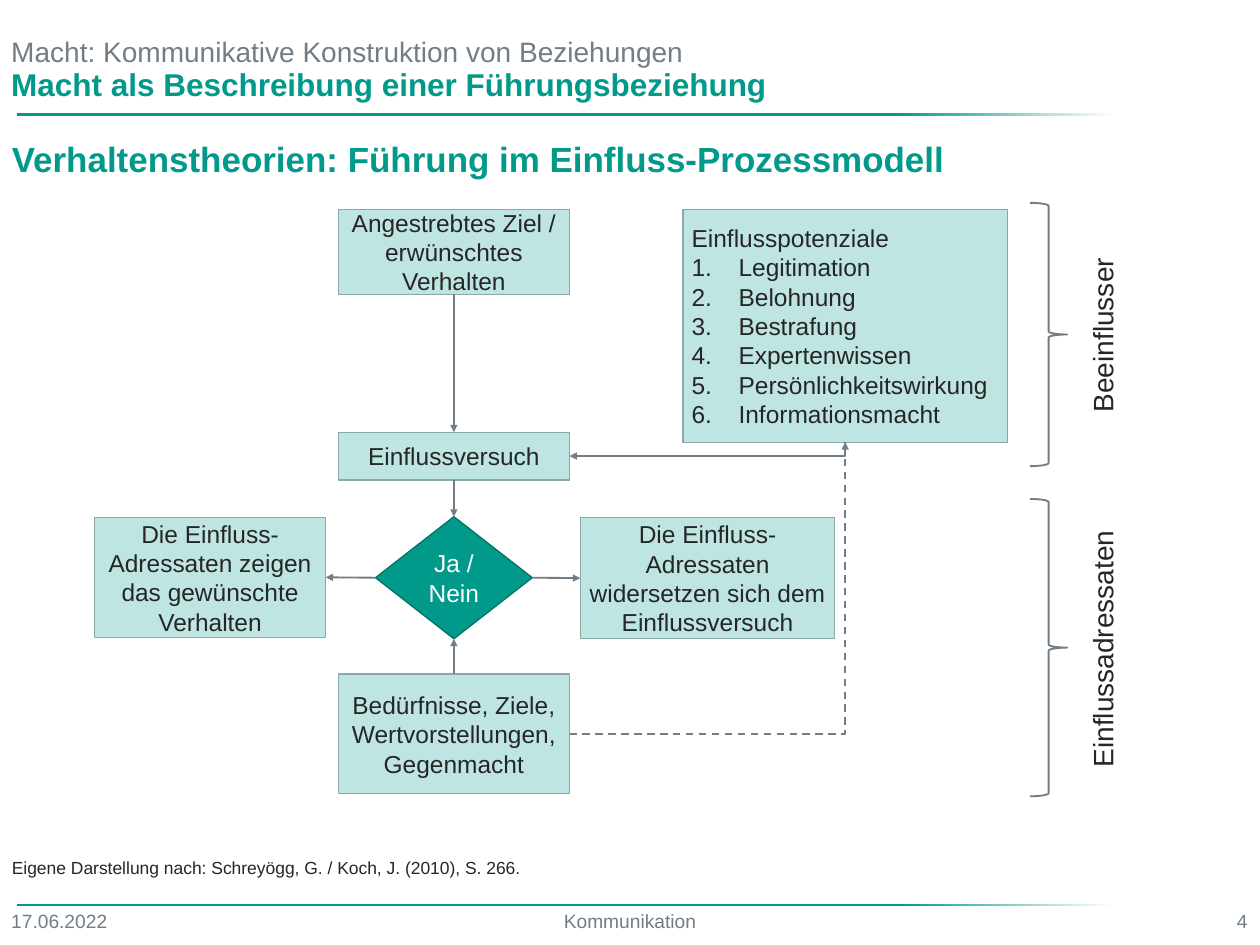
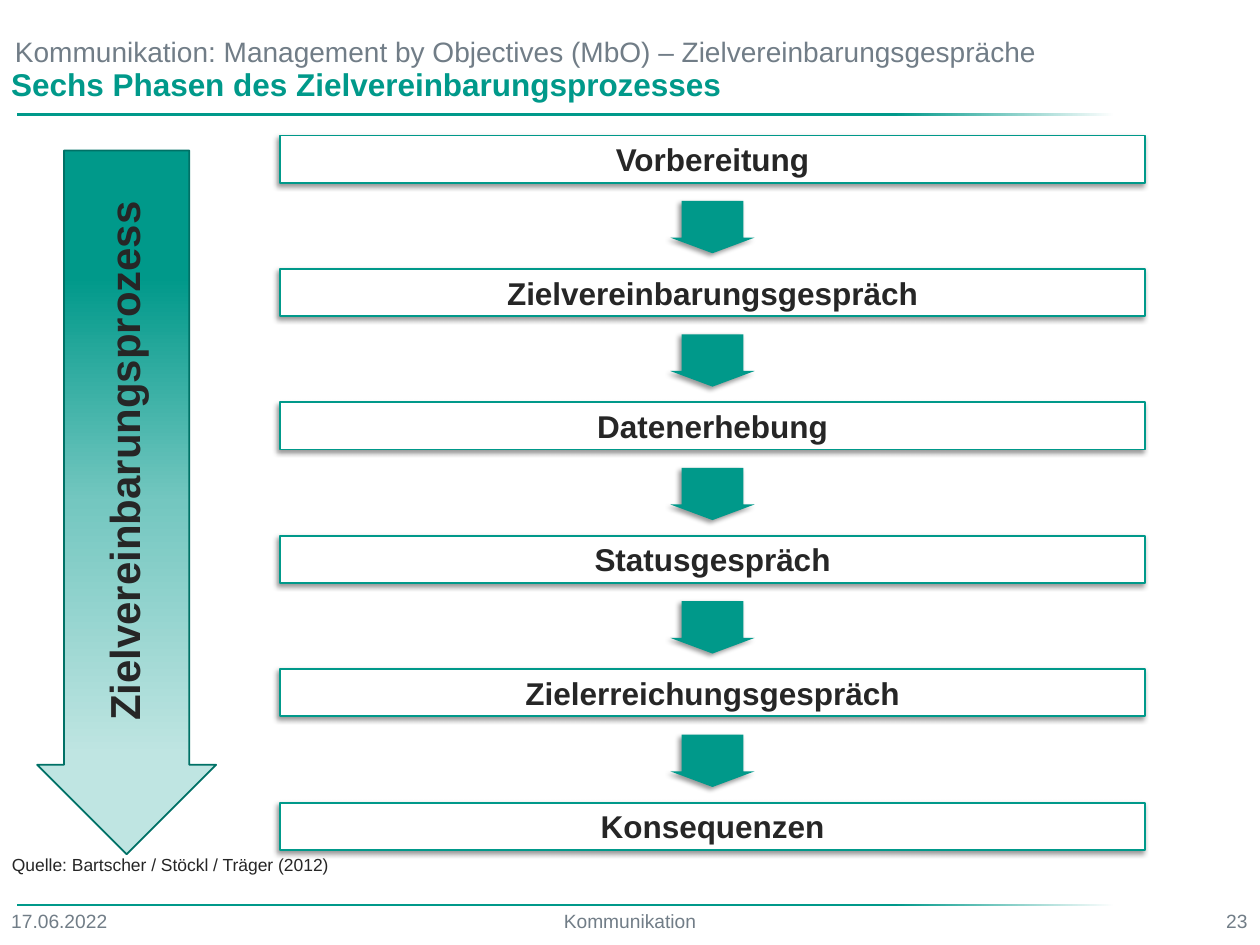
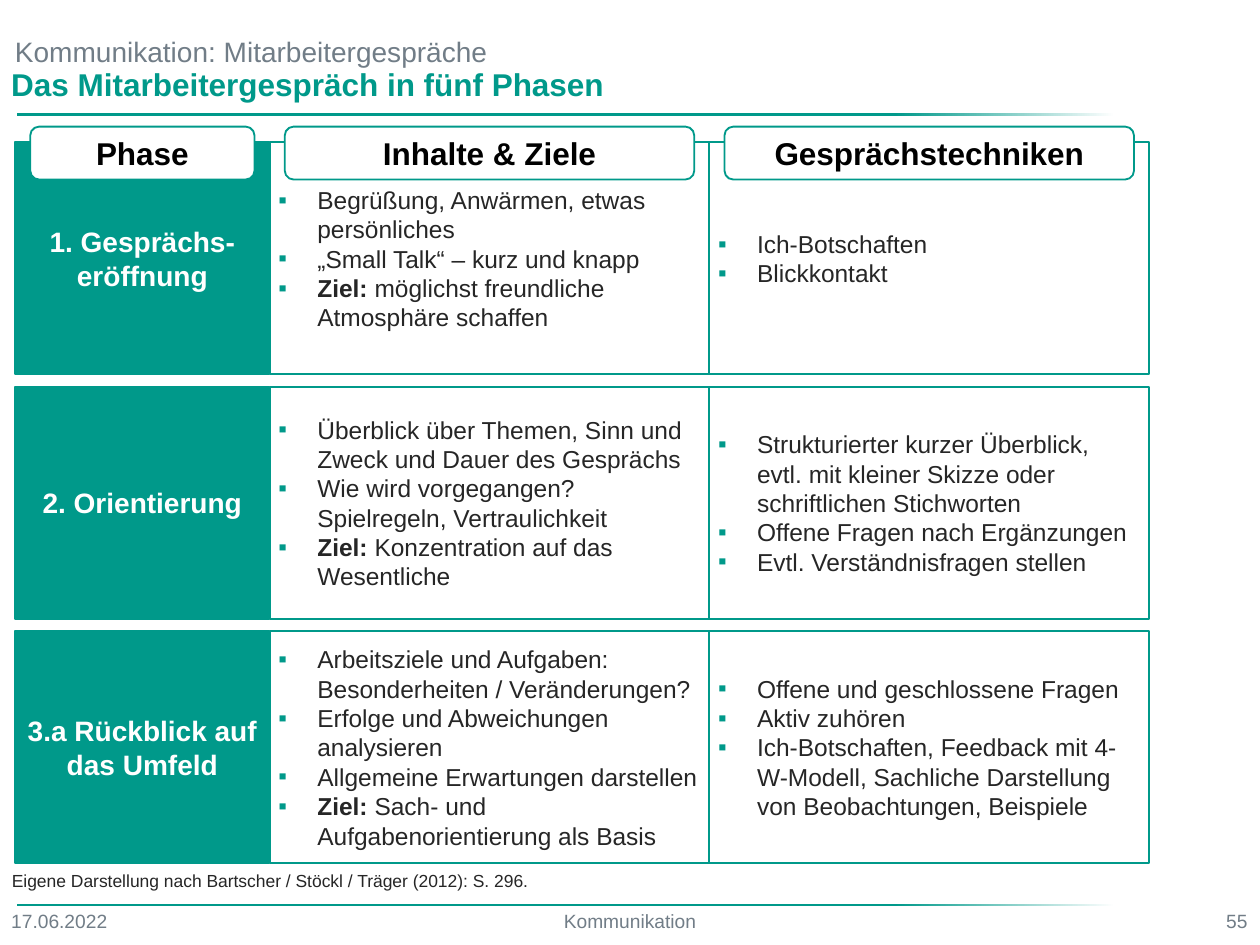
"""Three slides on leadership, target agreements and staff talks."""
from copy import deepcopy

from lxml import etree
from pptx import Presentation, util as u
from pptx.dml.color import RGBColor
from pptx.enum import dml, shapes, text
from pptx.oxml.ns import qn

TEAL = RGBColor(0x00, 0x99, 0x8A)
DEEP = RGBColor(0x00, 0x71, 0x66)
MID = RGBColor(0x74, 0xC7, 0xC0)
PALE = RGBColor(0xBF, 0xE5, 0xE2)
RIM = RGBColor(0x8D, 0xA9, 0xA7)
GREY = RGBColor(0x71, 0x7D, 0x87)
INK = RGBColor(0x26, 0x26, 0x26)
BLACK = RGBColor(0, 0, 0)
WHITE = RGBColor(0xFF, 0xFF, 0xFF)

FORM, SIDE, HOLD = shapes.MSO_SHAPE, text.PP_ALIGN, text.MSO_ANCHOR
LEFT, MIDDLE, RIGHT = SIDE.LEFT, SIDE.CENTER, SIDE.RIGHT

deck = Presentation()
deck.slide_width, deck.slide_height = u.Inches(14.22), u.Inches(10.67)
COL, ROW = deck.slide_width / 100, deck.slide_height / 75

FOOT = dict(size=15.6, ink=GREY)
HEAD = dict(size=22.8, ink=GREY, hold=HOLD.BOTTOM)
NAME = dict(size=25.6, ink=TEAL, bold=True)
NOTE = dict(size=14.2)
BOX = dict(fill=PALE, edge=RIM, side=MIDDLE, hold=HOLD.MIDDLE)
TURN = dict(side=MIDDLE, turn=270)
STEP = dict(fill=WHITE, edge=TEAL, rim=1.5, size=25.6, bold=True,
            side=MIDDLE, hold=HOLD.MIDDLE, shade=True)
CELL = dict(edge=TEAL, rim=1.5, hold=HOLD.MIDDLE)
PHASE = dict(CELL, fill=TEAL, ink=WHITE, size=22.8, bold=True, side=MIDDLE)
LABEL = dict(CELL, fill=WHITE, ink=BLACK, size=25.6, bold=True, side=MIDDLE)
FADE = [(0, TEAL), (0.8, TEAL), (1, WHITE)]
FALL = [(0.18, TEAL), (0.5, MID), (0.86, PALE)]


def tag(home, name, **data):
    """Append a drawing element and return it."""
    node = etree.SubElement(home, qn("a:" + name))
    for key, val in data.items():
        node.set(key, str(val))
    return node


def add(form, at, lines=(), fill=None, edge=None, rim=1, angle=0, adj=(), shade=False,
        turn=0, size=19.9, ink=INK, bold=False, side=LEFT, hold=HOLD.TOP,
        pad=0.1, mark=None):
    """Place a shape or text box on the current slide, measured in grid units."""
    x, y, w, h = at
    area = [int(n) for n in (x * COL, y * ROW, w * COL, h * ROW)]
    if form is None:
        item = page.shapes.add_textbox(*area)
    else:
        item = page.shapes.add_shape(form, *area)
        item.shadow.inherit = False
        for n, val in enumerate(adj):
            item.adjustments[n] = val
        if isinstance(fill, list):
            item.fill.gradient()
            item.fill.gradient_angle = angle
            stops = item._element.spPr.find(qn("a:gradFill")).find(qn("a:gsLst"))
            stops.append(deepcopy(stops[0]))
            for stop, (spot, tone) in zip(item.fill.gradient_stops, fill):
                stop.position, stop.color.rgb = spot, tone
        elif fill is None:
            item.fill.background()
        else:
            item.fill.solid()
            item.fill.fore_color.rgb = fill
        if edge is None:
            item.line.fill.background()
        else:
            item.line.color.rgb, item.line.width = edge, u.Pt(rim)
        if shade:
            glow = tag(item._element.spPr.find(qn("a:effectLst")), "outerShdw",
                       blurRad=u.Pt(4), dist=u.Pt(3), dir=135 * 60000, rotWithShape=0)
            tag(tag(glow, "srgbClr", val=BLACK), "alpha", val=40000)
    item.rotation = turn
    frame = item.text_frame
    looks = dict(word_wrap=True, vertical_anchor=hold, margin_left=u.Inches(pad),
                 margin_right=u.Inches(pad))
    for key, val in looks.items():
        setattr(frame, key, val)
    for n, line in enumerate([lines] if isinstance(lines, str) else lines):
        para = frame.add_paragraph() if n else frame.paragraphs[0]
        para.alignment = side
        if mark == "dot" or mark == "num" and n:
            prop = para._p.get_or_add_pPr()
            gap = u.Inches(0.44 if mark == "dot" else 0.53)
            prop.set("marL", str(gap))
            prop.set("indent", str(-gap))
            if mark == "dot":
                tag(tag(prop, "buClr"), "srgbClr", val=TEAL)
                tag(prop, "buFont", typeface="Arial")
                tag(prop, "buChar", char="▪")
            else:
                tag(prop, "buFont", typeface="Arial")
                tag(prop, "buAutoNum", type="arabicPeriod")
        parts = line.split("|")
        for k, part in enumerate(parts):
            run = para.add_run()
            run.text = part
            font = dict(name="Arial", size=u.Pt(size), bold=bold or k < len(parts) - 1)
            for key, val in font.items():
                setattr(run.font, key, val)
            run.font.color.rgb = ink
    return item


pages = []
for top, name, num, pad, note, low in [
    ("Macht: Kommunikative Konstruktion von Beziehungen",
     "Macht als Beschreibung einer Führungsbeziehung", "4", 0.1,
     "Eigene Darstellung nach: Schreyögg, G. / Koch, J. (2010), S. 266.", 67.7),
    ("Kommunikation: Management by Objectives (MbO) – Zielvereinbarungsgespräche",
     "Sechs Phasen des Zielvereinbarungsprozesses", "23", 0.14,
     "Quelle: Bartscher / Stöckl / Träger (2012)", 67.45),
    ("Kommunikation: Mitarbeitergespräche",
     "Das Mitarbeitergespräch in fünf Phasen", "55", 0.14,
     "Eigene Darstellung nach Bartscher / Stöckl / Träger (2012): S. 296.", 68.7),
]:
    page = deck.slides.add_slide(deck.slide_layouts[6])
    pages.append(page)
    for y, h in [(9, 0.2), (71.75, 0.14)]:
        add(FORM.RECTANGLE, (1.35, y, 87.1, h), fill=FADE)
    for x, w, word, side in [(0.2, 16.7, "17.06.2022", LEFT),
                             (19.6, 60.8, "Kommunikation", MIDDLE),
                             (83, 16.7, num, RIGHT)]:
        add(None, (x, 71.85, w, 3.1), word, side=side, **FOOT)
    add(None, (0.2, 1.9, 86.8, 3.87), top, pad=pad, **HEAD)
    add(None, (0.2, 4.8, 87, 3.94), name, **NAME)
    add(None, (0.25, low, 52, 2.4), note, **NOTE)

page = pages[0]
add(None, (0.25, 10.6, 91, 5), "Verhaltenstheorien: Führung im Einfluss-Prozessmodell",
    **dict(NAME, size=28.4))
AXIS, WIDE = 26.85, 18.35
goal = add(FORM.RECTANGLE, (AXIS, 16.6, WIDE, 6.75),
           "Angestrebtes Ziel / erwünschtes Verhalten", **BOX)
bid = add(FORM.RECTANGLE, (AXIS, 34.3, WIDE, 3.8), "Einflussversuch", **BOX)
power = add(FORM.RECTANGLE, (54.2, 16.6, 25.75, 18.5),
            ["Einflusspotenziale", "Legitimation", "Belohnung", "Bestrafung",
             "Expertenwissen", "Persönlichkeitswirkung", "Informationsmacht"],
            mark="num", **dict(BOX, side=LEFT))
yes = add(FORM.RECTANGLE, (7.5, 41.07, WIDE, 9.5),
          "Die Einfluss-Adressaten zeigen das gewünschte Verhalten", **BOX)
needs = add(FORM.RECTANGLE, (AXIS, 53.5, WIDE, 9.5),
            ["Bedürfnisse, Ziele, Wertvorstellungen,", "Gegenmacht"], **BOX)
pick = add(FORM.FLOWCHART_DECISION, (29.8, 41, 12.45, 9.7), "Ja / Nein",
           **dict(BOX, fill=TEAL, edge=DEEP, ink=WHITE))
no = add(FORM.RECTANGLE, (46.06, 41.07, 20.2, 9.63),
         "Die Einfluss-Adressaten widersetzen sich dem Einflussversuch", **BOX)

TOP, WEST, BASE, EAST = range(4)
for start, out, stop, into, bent, dash, end in [
    (pick, WEST, yes, EAST, False, False, "tailEnd"),
    (pick, EAST, no, WEST, False, False, "tailEnd"),
    (needs, TOP, pick, BASE, False, False, "tailEnd"),
    (bid, BASE, pick, TOP, False, False, "tailEnd"),
    (goal, BASE, bid, TOP, False, False, "tailEnd"),
    (needs, EAST, power, BASE, True, True, "tailEnd"),
    (bid, EAST, power, BASE, True, False, "headEnd"),
]:
    kind = shapes.MSO_CONNECTOR.ELBOW if bent else shapes.MSO_CONNECTOR.STRAIGHT
    wire = page.shapes.add_connector(kind, 0, 0, 0, 0)
    wire.begin_connect(start, out)
    wire.end_connect(stop, into)
    wire.line.color.rgb, wire.line.width = GREY, u.Pt(1.5)
    if dash:
        wire.line.dash_style = dml.MSO_LINE.DASH
    prop = wire._element.spPr
    if bent:
        prop.find(qn("a:prstGeom")).set("prst", "bentConnector2")
    tag(prop.find(qn("a:ln")), end, type="triangle")
    tag(prop, "effectLst")

for y, h, low, word in [(16.1, 20.9, 24.9, "Beeinflusser"),
                        (39.6, 23.6, 49.8, "Einflussadressaten")]:
    add(FORM.RIGHT_BRACE, (81.75, y, 2.95, h), edge=GREY, rim=1.5)
    add(None, (76.5, low, 22, 3.4), word, size=22.8, **TURN)

page = pages[1]
add(FORM.DOWN_ARROW, (2.95, 11.95, 14.2, 55.85), fill=FALL, angle=270,
    edge=DEEP, rim=1.5, adj=(0.7, 0.5))
add(None, (-13.15, 34.2, 46, 4.8), "Zielvereinbarungsprozess", size=34.1, bold=True, **TURN)
steps = ["Vorbereitung", "Zielvereinbarungsgespräch", "Datenerhebung",
         "Statusgespräch", "Zielerreichungsgespräch", "Konsequenzen"]
for n, word in enumerate(steps):
    y = 10.75 + 10.59 * n
    add(FORM.RECTANGLE, (22.2, y, 68.7, 3.75), word, **STEP)
    if n < len(steps) - 1:
        add(FORM.DOWN_ARROW, (53.2, y + 5.2, 6.7, 4.15), fill=TEAL,
            adj=(0.73, 0.3), shade=True)

page = pages[2]
COLS = [(1.2, 20.2), (21.4, 34.9), (56.3, 34.9)]
for n, row in enumerate([
    ("1. Gesprächs-eröffnung",
     ["Begrüßung, Anwärmen, etwas persönliches", "„Small Talk“ – kurz und knapp",
      "Ziel:| möglichst freundliche Atmosphäre schaffen"],
     ["Ich-Botschaften", "Blickkontakt"]),
    ("2. Orientierung",
     ["Überblick über Themen, Sinn und Zweck und Dauer des Gesprächs",
      "Wie wird vorgegangen? Spielregeln, Vertraulichkeit",
      "Ziel: |Konzentration auf das Wesentliche"],
     ["Strukturierter kurzer Überblick, evtl. mit kleiner Skizze oder "
      "schriftlichen Stichworten",
      "Offene Fragen nach Ergänzungen", "Evtl. Verständnisfragen stellen"]),
    ("3.a Rückblick auf das Umfeld",
     ["Arbeitsziele und Aufgaben: Besonderheiten / Veränderungen?",
      "Erfolge und Abweichungen analysieren", "Allgemeine Erwartungen darstellen",
      "Ziel: |Sach- und Aufgabenorientierung als Basis"],
     ["Offene und geschlossene Fragen", "Aktiv zuhören",
      "Ich-Botschaften, Feedback mit 4-W-Modell, Sachliche Darstellung von "
      "Beobachtungen, Beispiele"]),
]):
    for k, ((x, w), lines) in enumerate(zip(COLS, row)):
        add(FORM.RECTANGLE, (x, 11.3 + 19.4 * n, w, 18.4), lines,
            mark="dot" if k else None, **(CELL if k else PHASE))
for (x, w), word in zip(COLS, ["Phase", "Inhalte & Ziele", "Gesprächstechniken"]):
    add(FORM.ROUNDED_RECTANGLE, (x + 1.2, 10.05, w - 2.4, 4.2), word, **LABEL)

deck.save("out.pptx")
